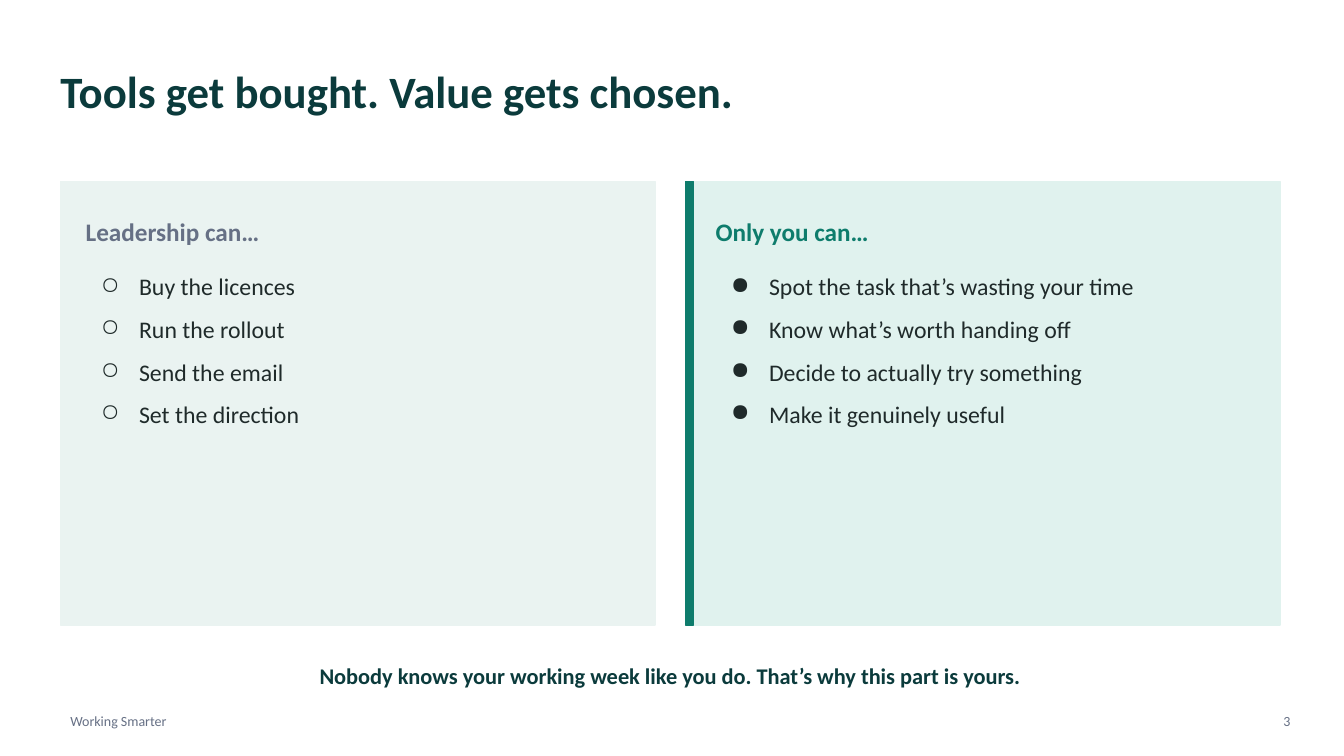
from pptx import Presentation
from pptx.dml.color import RGBColor
from pptx.enum.shapes import MSO_SHAPE
from pptx.enum.text import MSO_ANCHOR, PP_ALIGN
from pptx.oxml.ns import qn
from pptx.util import Pt
from lxml import etree

RECTANGLE = MSO_SHAPE.RECTANGLE
TOP, MIDDLE = MSO_ANCHOR.TOP, MSO_ANCHOR.MIDDLE
LEFT, CENTER, RIGHT = PP_ALIGN.LEFT, PP_ALIGN.CENTER, PP_ALIGN.RIGHT

FONT = "Calibri"
COLORS = {
    "dark": "0B3B3C",
    "muted": "667085",
    "body": "1F2A2A",
    "accent": "0E7C6C",
    "pale": "EAF3F1",
    "mint": "E0F2EE",
}

TITLE = "Tools get bought. Value gets chosen."
TAKEAWAY = "Nobody knows your working week like you do. That’s why this part is yours."
FOOTER, PAGE_NUMBER = "Working Smarter", "3"
CARDS = [
    {
        "heading": "Leadership can…",
        "items": ["Buy the licences", "Run the rollout", "Send the email", "Set the direction"],
        "bullet": "○", "fill": "pale", "heading_color": "muted",
        "bar": False, "padding": 18, "list_width": 374.4,
    },
    {
        "heading": "Only you can…",
        "items": [
            "Spot the task that’s wasting your time",
            "Know what’s worth handing off",
            "Decide to actually try something",
            "Make it genuinely useful",
        ],
        "bullet": "●", "fill": "mint", "heading_color": "accent",
        "bar": True, "padding": 21.6, "list_width": 381.6,
    },
]

MARGIN, CONTENT_WIDTH = 43.2, 871.2
CARD_TOP, CARD_HEIGHT, CARD_GAP = 129.6, 316.8, 21.6
CARD_WIDTH = (CONTENT_WIDTH - CARD_GAP) / 2
BAR_WIDTH = 5.76
HEADING_TOP, LIST_TOP = CARD_TOP + 18, CARD_TOP + 64.8
LIST_OFFSET, BULLET_INDENT = 10.8, 27.36
FOOTER_TOP, FOOTER_HEIGHT = 504, 21.6


def color(name):
    return RGBColor.from_string(COLORS[name])


def add_bullet(paragraph, character):
    properties = paragraph._p.get_or_add_pPr()
    properties.set("marL", str(Pt(BULLET_INDENT)))
    properties.set("indent", str(-Pt(BULLET_INDENT)))
    etree.SubElement(properties, qn("a:buChar")).set("char", character)
    paragraph.space_after = Pt(10)


def add_text(slide, lines, left, top, width, height, size, color_name,
             bold=False, align=LEFT, anchor=MIDDLE, inset=(0, 0), bullet=None):
    """Add a text box; inset is (horizontal, vertical) and each line is a paragraph."""
    box = slide.shapes.add_textbox(Pt(left), Pt(top), Pt(width), Pt(height))
    frame = box.text_frame
    frame.word_wrap = True
    frame.vertical_anchor = anchor
    frame.margin_left = frame.margin_right = Pt(inset[0])
    frame.margin_top = frame.margin_bottom = Pt(inset[1])
    frame.text = "\n".join(lines)
    for paragraph in frame.paragraphs:
        if bullet:
            add_bullet(paragraph, bullet)
        paragraph.alignment = align
        paragraph.font.name = FONT
        paragraph.font.size = Pt(size)
        paragraph.font.bold = bold
        paragraph.font.color.rgb = color(color_name)


def add_panel(slide, left, width, color_name):
    panel = slide.shapes.add_shape(
        RECTANGLE, Pt(left), Pt(CARD_TOP), Pt(width), Pt(CARD_HEIGHT))
    panel.shadow.inherit = False
    panel.fill.solid()
    panel.fill.fore_color.rgb = color(color_name)
    panel.line.color.rgb = color(color_name)
    panel.line.width = Pt(1)


def add_card(slide, card, left):
    add_panel(slide, left, CARD_WIDTH, card["fill"])
    if card["bar"]:
        add_panel(slide, left, BAR_WIDTH, "accent")
    text_left = left + card["padding"]
    add_text(slide, [card["heading"]], text_left, HEADING_TOP, 388.8, 36,
             18, card["heading_color"], bold=True)
    add_text(slide, card["items"], text_left + LIST_OFFSET, LIST_TOP,
             card["list_width"], 230.4, 17, "body", anchor=TOP, bullet=card["bullet"])


def main():
    presentation = Presentation()
    presentation.slide_width, presentation.slide_height = Pt(960), Pt(540)
    slide = presentation.slides.add_slide(presentation.slide_layouts[6])

    add_text(slide, [TITLE], MARGIN, 32.4, CONTENT_WIDTH, 64.8, 32, "dark", bold=True)
    for index, card in enumerate(CARDS):
        add_card(slide, card, MARGIN + index * (CARD_WIDTH + CARD_GAP))
    add_text(slide, [TAKEAWAY], MARGIN, 464.4, CONTENT_WIDTH, 36,
             16, "dark", bold=True, align=CENTER)

    for text, left, width, align in [
        (FOOTER, MARGIN, 288, LEFT),
        (PAGE_NUMBER, 892.8, 36, RIGHT),
    ]:
        add_text(slide, [text], left, FOOTER_TOP, width, FOOTER_HEIGHT,
                 10, "muted", align=align, inset=(7.2, 3.6))

    presentation.save("out.pptx")


if __name__ == "__main__":
    main()
